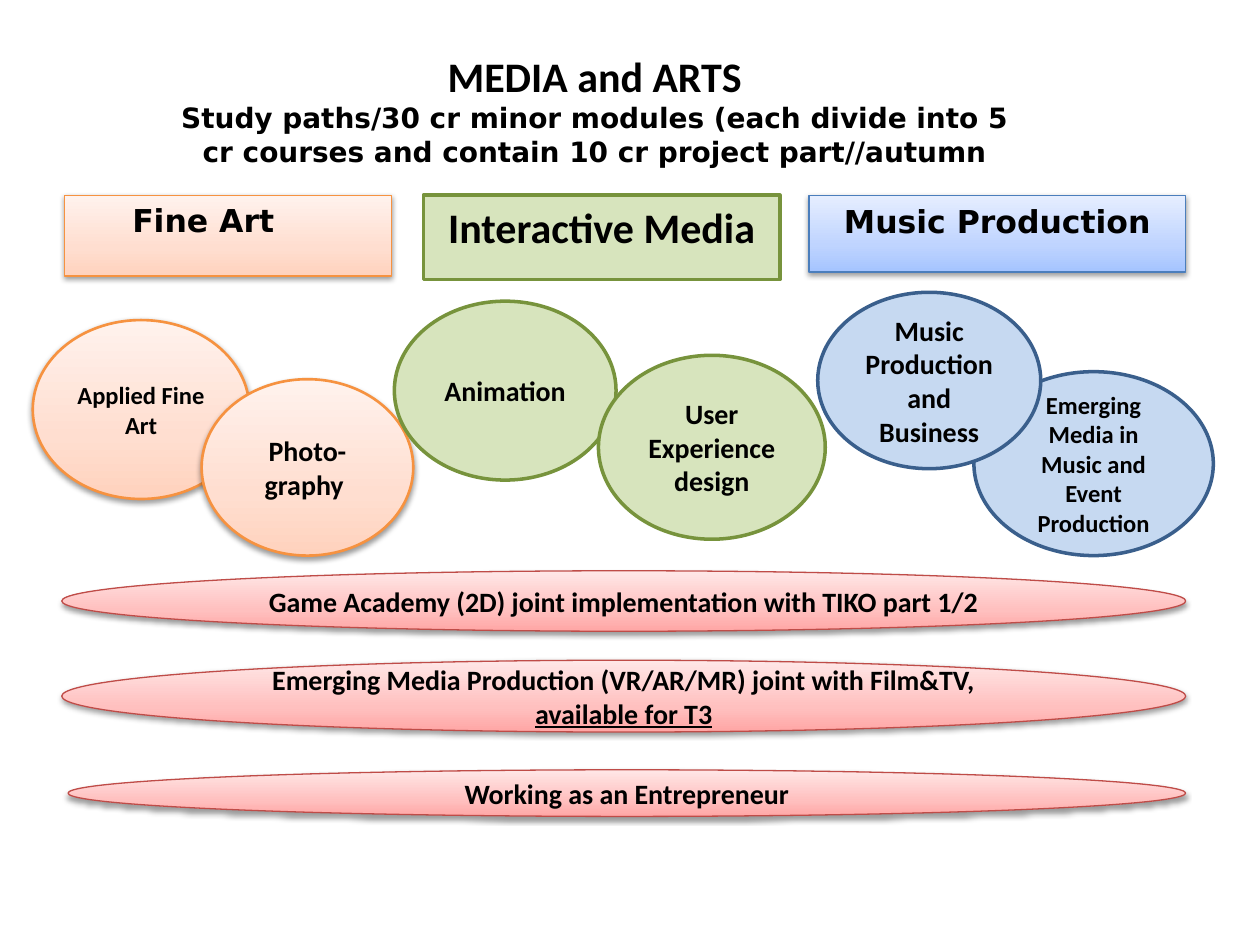
import copy

import pptx
import pptx.dml.color
import pptx.enum.shapes
import pptx.enum.text
import pptx.oxml
import pptx.oxml.ns
import pptx.util

Inches = pptx.util.Inches
Pt = pptx.util.Pt
RGBColor = pptx.dml.color.RGBColor
Shape = pptx.enum.shapes.MSO_SHAPE
Align = pptx.enum.text.PP_ALIGN
Anchor = pptx.enum.text.MSO_ANCHOR

BLACK = RGBColor(0x00, 0x00, 0x00)
ORANGE_LINE = RGBColor(0xF6, 0x92, 0x40)
GREEN = RGBColor(0xD7, 0xE4, 0xBD)
GREEN_LINE = RGBColor(0x77, 0x93, 0x3C)
BLUE = RGBColor(0xC6, 0xD9, 0xF1)
BLUE_LINE = RGBColor(0x3A, 0x5F, 0x8C)
SKY_LINE = RGBColor(0x4B, 0x7E, 0xBC)
RED_LINE = RGBColor(0xBF, 0x4C, 0x48)

# Gradient colours from bottom to top
ORANGE_BLEND = (RGBColor(0xFF, 0xD2, 0xBD), RGBColor(0xFF, 0xDE, 0xD0), RGBColor(0xFF, 0xF2, 0xED))
SKY_BLEND = (RGBColor(0xA4, 0xC4, 0xFF), RGBColor(0xBF, 0xD4, 0xFF), RGBColor(0xE6, 0xEE, 0xFF))
RED_BLEND = (RGBColor(0xFF, 0xA6, 0xA5), RGBColor(0xFF, 0xC0, 0xBF), RGBColor(0xFF, 0xE7, 0xE7))
BLEND_POSITIONS = (0, 0.35, 1)

SHADOW = (
    f'<a:outerShdw {pptx.oxml.ns.nsdecls("a")} blurRad="40000" dist="20000" dir="5400000" '
    'rotWithShape="0"><a:srgbClr val="000000"><a:alpha val="38000"/></a:srgbClr></a:outerShdw>'
)

# Fill, line colour and line width of each kind of shape
ORANGE_BOX = (ORANGE_BLEND, ORANGE_LINE, 0.75)
ORANGE_OVAL = (ORANGE_BLEND, ORANGE_LINE, 1.5)
GREEN_STYLE = (GREEN, GREEN_LINE, 2)
BLUE_OVAL = (BLUE, BLUE_LINE, 2)
SKY_BOX = (SKY_BLEND, SKY_LINE, 0.75)
RED_OVAL = (RED_BLEND, RED_LINE, 0.75)


class Board:
    """Holds the text style and the current page."""

    text_font = "Calibri"
    heading_font = "DejaVu Sans"

    def __init__(self, page):
        self.page = page

    def add_span(self, para, text, size, font=text_font, underline=None):
        span = para.add_run()
        span.text = text
        formats = {"name": font, "size": Pt(size), "bold": True, "underline": underline}
        for name, value in formats.items():
            setattr(span.font, name, value)
        span.font.color.rgb = BLACK

    def title(self, place, heading, subheading):
        box = self.page.shapes.title
        box.left, box.top, box.width, box.height = map(Inches, place)
        frame = box.text_frame
        frame.auto_size = pptx.enum.text.MSO_AUTO_SIZE.NONE
        frame.word_wrap = True
        frame.vertical_anchor = Anchor.TOP
        first, second = frame.paragraphs[0], frame.add_paragraph()
        first.alignment = second.alignment = Align.CENTER
        first._p.get_or_add_pPr().set("marL", str(Inches(0.11)))
        self.add_span(first, heading, 24)
        self.add_span(second, subheading, 16, self.heading_font)

    def shape(self, kind, place, style, anchor):
        fill, line, width = style
        box = self.page.shapes.add_shape(kind, *map(Inches, place))
        box.shadow.inherit = False
        if isinstance(fill, RGBColor):
            box.fill.solid()
            box.fill.fore_color.rgb = fill
        else:
            self.blend(box, fill)
        box.line.color.rgb = line
        box.line.width = Pt(width)
        box.text_frame.word_wrap = True
        box.text_frame.vertical_anchor = anchor
        box.text_frame.paragraphs[0].alignment = Align.CENTER
        return box

    def blend(self, box, colours):
        """Three-stop vertical gradient with a soft shadow below."""
        box.fill.gradient()
        box.fill.gradient_angle = 90
        stops = box._element.spPr.xpath("a:gradFill/a:gsLst")[0]
        stops.append(copy.deepcopy(stops[-1]))
        for stop, colour, position in zip(box.fill.gradient_stops, colours, BLEND_POSITIONS):
            stop.color.rgb = colour
            stop.position = position
        effects = box._element.spPr.xpath("a:effectLst")[0]
        effects.append(pptx.oxml.parse_xml(SHADOW))

    def heading(self, place, style, text, size, font, indent=None):
        box = self.shape(Shape.RECTANGLE, place, style, Anchor.TOP)
        para = box.text_frame.paragraphs[0]
        if indent is not None:
            para.alignment = Align.LEFT
            box.text_frame.margin_left = Inches(indent)
        self.add_span(para, text, size, font)

    def oval(self, place, style, text, size=16, underlined=None):
        box = self.shape(Shape.OVAL, place, style, Anchor.MIDDLE)
        para = box.text_frame.paragraphs[0]
        self.add_span(para, text, size)
        if underlined:
            self.add_span(para, underlined, size, underline=True)


def main():
    deck = pptx.Presentation()
    deck.slide_width, deck.slide_height = Inches(10), Inches(7.5)
    board = Board(deck.slides.add_slide(deck.slide_layouts[5]))

    board.title(
        (1.08, 0.35, 7.17, 1.04),
        "MEDIA and ARTS",
        "Study paths/30 cr minor modules (each divide into 5 cr courses "
        "and contain 10 cr project part//autumn",
    )

    # Study path headings
    board.heading((0.51, 1.55, 2.6, 0.64), ORANGE_BOX, "Fine Art", 18, board.heading_font, indent=0.54)
    board.heading((3.36, 1.55, 2.83, 0.67), GREEN_STYLE, "Interactive Media", 24, board.text_font)
    board.heading((6.42, 1.55, 2.99, 0.61), SKY_BOX, "Music Production", 18, board.heading_font)

    # Minor modules, from back to front
    modules = [
        ((7.73, 2.95, 1.9, 1.46), BLUE_OVAL, "Emerging Media in Music and Event Production", 14),
        ((6.49, 2.32, 1.77, 1.4), BLUE_OVAL, "Music Production and Business", 16),
        ((0.26, 2.54, 1.72, 1.42), ORANGE_OVAL, "Applied Fine Art", 14),
        ((1.6, 3.01, 1.68, 1.4), ORANGE_OVAL, "Photo-graphy ", 16),
        ((3.13, 2.39, 1.76, 1.42), GREEN_STYLE, "Animation", 16),
        ((4.75, 2.82, 1.8, 1.46), GREEN_STYLE, "User Experience design", 16),
    ]
    for place, style, text, size in modules:
        board.oval(place, style, text, size)

    # Modules shared by all paths
    shared = [
        ((0.49, 4.53, 8.92, 0.48), "Game Academy (2D) joint implementation with TIKO part 1/2", None),
        ((0.49, 5.24, 8.92, 0.57), "Emerging Media Production (VR/AR/MR) joint with Film&TV, ", "available for T3"),
        ((0.54, 6.11, 8.87, 0.37), "Working as an Entrepreneur", None),
    ]
    for place, text, underlined in shared:
        board.oval(place, RED_OVAL, text, underlined=underlined)

    deck.save("out.pptx")


if __name__ == "__main__":
    main()
